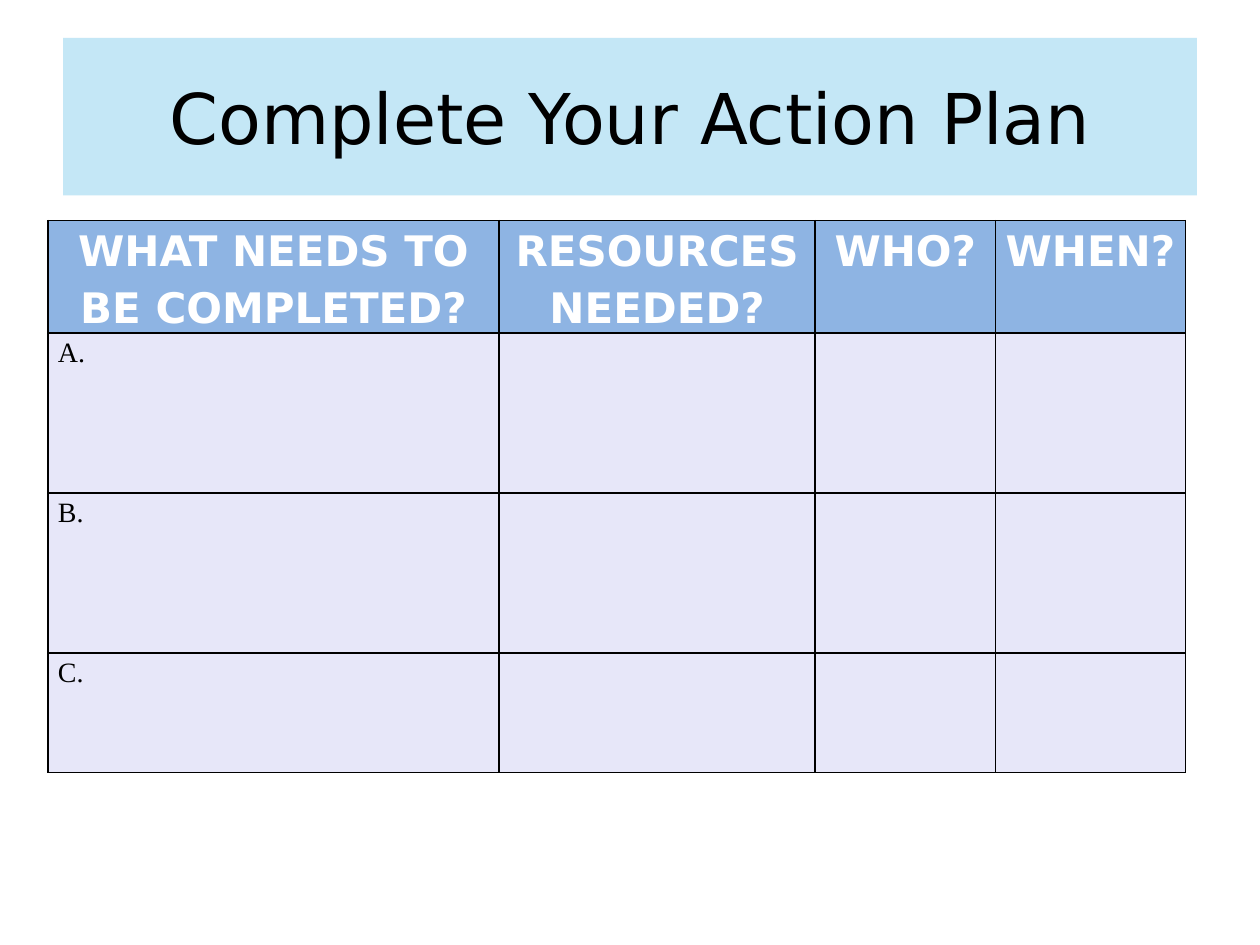
from typing import NamedTuple

from lxml.etree import SubElement
from pptx import Presentation
from pptx.dml.color import RGBColor
from pptx.enum.text import MSO_ANCHOR, PP_ALIGN
from pptx.oxml import parse_xml
from pptx.oxml.ns import nsdecls, qn
from pptx.util import Inches, Pt

BLACK = RGBColor(0x00, 0x00, 0x00)
WHITE = RGBColor(0xFF, 0xFF, 0xFF)
SKY = RGBColor(0xA9, 0xDC, 0xF2)
HEADER_BLUE = RGBColor(0x8E, 0xB4, 0xE3)
LAVENDER = RGBColor(0xE7, 0xE7, 0xF9)


class Column(NamedTuple):
    heading: str
    width: float


class Step(NamedTuple):
    label: str
    height: float


class CellStyle(NamedTuple):
    font: str
    size: int
    bold: bool
    color: RGBColor
    fill: RGBColor
    align: PP_ALIGN


COLUMNS = [
    Column("WHAT NEEDS TO BE COMPLETED?", 3.58),
    Column("RESOURCES NEEDED?", 2.51),
    Column("WHO?", 1.43),
    Column("WHEN?", 1.51),
]
HEADER_HEIGHT = 0.89
STEPS = [Step("A.", 1.27), Step("B.", 1.27), Step("C.", 0.95)]

HEADER = CellStyle("DejaVu Sans", 24, True, WHITE, HEADER_BLUE, PP_ALIGN.CENTER)
BODY = CellStyle("Times New Roman", 16, False, BLACK, LAVENDER, PP_ALIGN.LEFT)


def add_borders(cell) -> None:
    tcPr = cell._tc.get_or_add_tcPr()
    for i, side in enumerate(("lnL", "lnR", "lnT", "lnB")):
        # Borders must come before the fill in a:tcPr
        tcPr.insert(i, parse_xml(
            f'<a:{side} {nsdecls("a")} w="{Pt(1)}"><a:solidFill>'
            f'<a:srgbClr val="{BLACK}"/></a:solidFill></a:{side}>'))


def format_cell(cell, text: str, style: CellStyle) -> None:
    cell.fill.solid()
    cell.fill.fore_color.rgb = style.fill
    cell.margin_left = cell.margin_right = Inches(0.08)
    cell.margin_top = cell.margin_bottom = 0
    add_borders(cell)
    cell.text = text
    p = cell.text_frame.paragraphs[0]
    p.alignment = style.align
    p.line_spacing = 1.15
    p.font.name = style.font
    p.font.size = Pt(style.size)
    p.font.bold = style.bold
    p.font.color.rgb = style.color


def add_plan_table(s) -> None:
    heights = [HEADER_HEIGHT] + [step.height for step in STEPS]
    width = sum(col.width for col in COLUMNS)
    table = s.shapes.add_table(
        len(heights), len(COLUMNS), Inches(0.38), Inches(1.75),
        Inches(width), Inches(sum(heights))).table
    for row, height in zip(table.rows, heights):
        row.height = Inches(height)
    for c, col in enumerate(COLUMNS):
        table.columns[c].width = Inches(col.width)
        format_cell(table.cell(0, c), col.heading, HEADER)
        for r, step in enumerate(STEPS, start=1):
            format_cell(table.cell(r, c), step.label if c == 0 else "", BODY)


def format_title(title) -> None:
    title.left, title.top = Inches(0.5), Inches(0.3)
    title.width, title.height = Inches(9), Inches(1.25)
    title.fill.solid()
    title.fill.fore_color.rgb = SKY
    color = title.fill._xPr.find(qn("a:solidFill"))[0]
    SubElement(color, qn("a:alpha")).set("val", "68000")
    tf = title.text_frame
    tf.text = "Complete Your Action Plan"
    tf.vertical_anchor = MSO_ANCHOR.MIDDLE
    p = tf.paragraphs[0]
    p.alignment = PP_ALIGN.CENTER
    p.font.name = "DejaVu Sans"
    p.font.size = Pt(40)
    p.font.color.rgb = BLACK


def main() -> None:
    prs = Presentation()
    prs.slide_width, prs.slide_height = Inches(10), Inches(7.5)
    s = prs.slides.add_slide(prs.slide_layouts[5])
    format_title(s.shapes.title)
    add_plan_table(s)
    prs.save("out.pptx")


if __name__ == "__main__":
    main()
